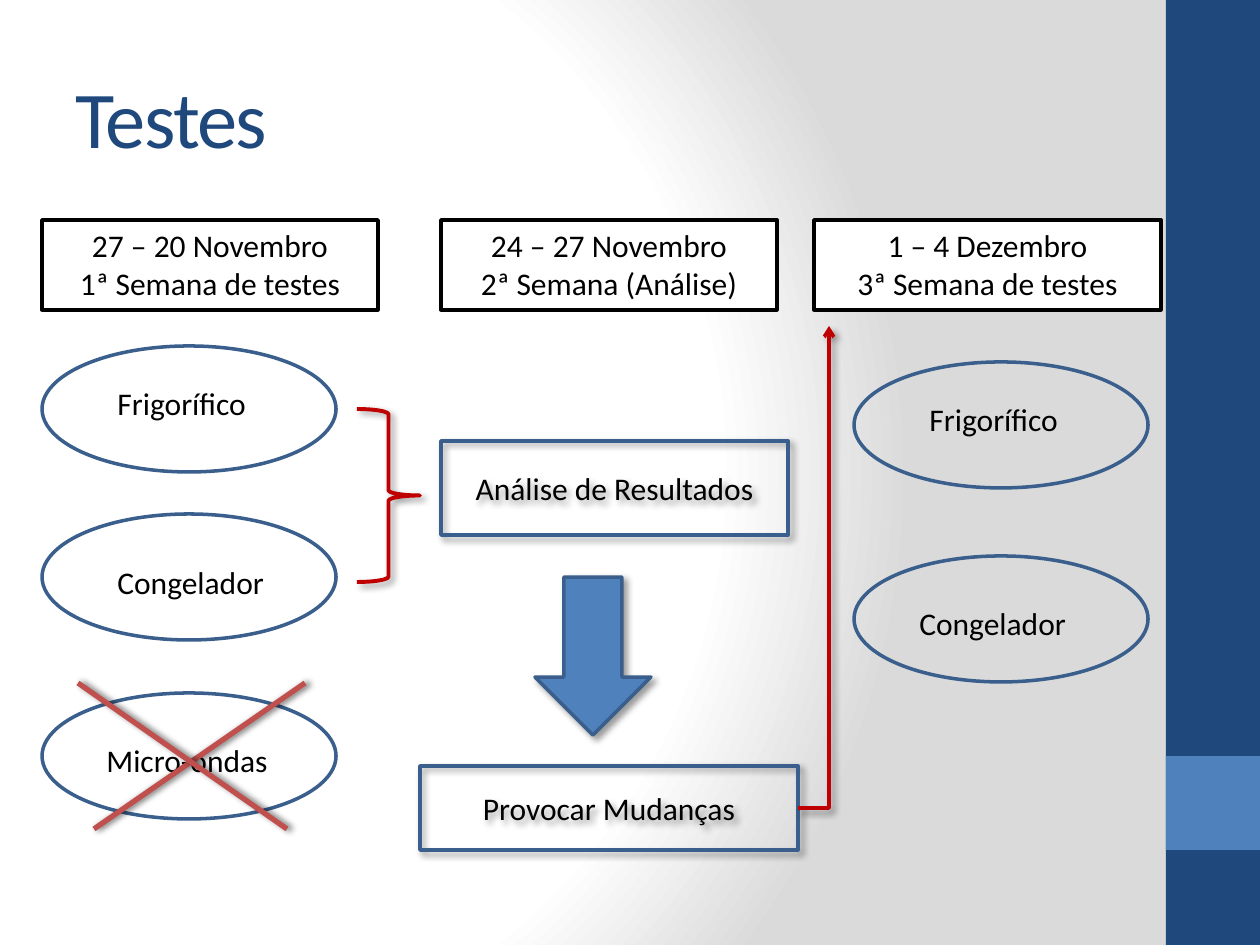
from dataclasses import dataclass

from lxml import etree
from pptx import Presentation
from pptx.dml.color import RGBColor
from pptx.enum.shapes import MSO_CONNECTOR, MSO_SHAPE
from pptx.enum.text import MSO_ANCHOR, MSO_AUTO_SIZE, PP_ALIGN
from pptx.oxml import parse_xml
from pptx.oxml.ns import nsdecls, qn
from pptx.util import Emu, Pt

RECTANGLE, ELLIPSE = MSO_SHAPE.RECTANGLE, MSO_SHAPE.OVAL
DOWN_ARROW, RIGHT_BRACE = MSO_SHAPE.DOWN_ARROW, MSO_SHAPE.RIGHT_BRACE
STRAIGHT, ELBOW = MSO_CONNECTOR.STRAIGHT, MSO_CONNECTOR.ELBOW
MIDDLE, TOP = MSO_ANCHOR.MIDDLE, MSO_ANCHOR.TOP
LEFT, CENTER = PP_ALIGN.LEFT, PP_ALIGN.CENTER
NO_FIT = MSO_AUTO_SIZE.NONE
PIXELS_PER_INCH = 126
TITLE_ONLY_LAYOUT = 5


@dataclass(frozen=True)
class Theme:
    """Colours, type sizes, line widths and shadows of the slide."""

    font: str = "Calibri"
    title_size: int = 46
    body_size: int = 18
    navy: str = "1F497D"
    blue: str = "4F81BD"
    outline: str = "3A5F8C"
    red: str = "C00000"
    cross: str = "C0504D"
    black: str = "000000"
    white: str = "FFFFFF"
    grey: str = "DADADA"
    line: float = 2
    brace_line: float = 2.25
    cross_line: float = 3
    soft_shadow: tuple = (40, 4, 3, 45)
    cross_shadow: tuple = (60, 4, 2, 0)


THEME = Theme()


def px(*lengths):
    """Convert pixel lengths to EMU."""
    return [Emu(round(length * 914400 / PIXELS_PER_INCH)) for length in lengths]


def set_background(slide):
    """Fill the background with a circular gradient."""
    slide.background.fill.gradient()
    old_fill = slide.element.find(".//" + qn("a:gradFill"))
    stops = ((0, THEME.white), (75, THEME.white), (100, THEME.grey))
    stop_xml = "".join(
        f'<a:gs pos="{position * 1000}"><a:srgbClr val="{color}"/></a:gs>'
        for position, color in stops
    )
    gradient = parse_xml(
        f'<a:gradFill {nsdecls("a")} rotWithShape="1"><a:gsLst>{stop_xml}</a:gsLst>'
        '<a:path path="circle"><a:fillToRect l="20000" t="50000" r="100000" b="50000"/>'
        "</a:path></a:gradFill>"
    )
    old_fill.getparent().replace(old_fill, gradient)


def set_shadow(shape, shadow):
    """Replace the inherited shadow with the given one, or with none."""
    properties = shape.element.spPr
    effects = etree.SubElement(properties, qn("a:effectLst"))
    if shadow:
        opacity, blur, distance, angle = shadow
        effects.append(parse_xml(
            f'<a:outerShdw {nsdecls("a")} blurRad="{Pt(blur)}" dist="{Pt(distance)}" '
            f'dir="{angle * 60000}" rotWithShape="0"><a:srgbClr val="{THEME.black}">'
            f'<a:alpha val="{opacity * 1000}"/></a:srgbClr></a:outerShdw>'
        ))


def set_line(line, color, width):
    """Give a line its colour and width."""
    line.color.rgb = RGBColor.from_string(color)
    line.width = Pt(width)


def write_text(shape, lines, align=CENTER, anchor=MIDDLE, wrap=True):
    """Write body paragraphs into a shape."""
    frame = shape.text_frame
    frame.word_wrap = wrap
    frame.vertical_anchor = anchor
    frame.text = "\n".join(lines)
    for paragraph in frame.paragraphs:
        paragraph.alignment = align
        paragraph.font.name = THEME.font
        paragraph.font.size = Pt(THEME.body_size)
        paragraph.font.color.rgb = RGBColor.from_string(THEME.black)


def add_shape(shapes, kind, box, fill=None, line=None, width=THEME.line, shadow=None):
    """Add a preset shape with explicit fill, line and shadow."""
    shape = shapes.add_shape(kind, *px(*box))
    if fill:
        shape.fill.solid()
        shape.fill.fore_color.rgb = RGBColor.from_string(fill)
    else:
        shape.fill.background()
    if line:
        set_line(shape.line, line, width)
    else:
        shape.line.fill.background()
    set_shadow(shape, shadow)
    return shape


def add_connector(shapes, kind, points, color, width, shadow):
    """Add a connector between two points."""
    connector = shapes.add_connector(kind, *px(*points))
    set_line(connector.line, color, width)
    set_shadow(connector, shadow)
    return connector


def add_title(slide, text):
    """Place and format the title placeholder."""
    title = slide.shapes.title
    title.left, title.top, title.width, title.height = px(63, 38, 1050, 157)
    frame = title.text_frame
    frame.text = text
    frame.auto_size = NO_FIT
    frame.vertical_anchor = MIDDLE
    paragraph = frame.paragraphs[0]
    paragraph.alignment = LEFT
    paragraph.font.name = THEME.font
    paragraph.font.size = Pt(THEME.title_size)
    paragraph.font.color.rgb = RGBColor.from_string(THEME.navy)
    paragraph.runs[0].font._element.set("spc", "-100")


def add_week(slide, left, width, lines):
    """Add the heading box of one week."""
    shape = add_shape(slide.shapes, RECTANGLE, (left, 220, width, 90), THEME.white, THEME.black)
    write_text(shape, lines, anchor=TOP)


def add_step(slide, box, text):
    """Add an outlined step with a shadow."""
    shape = add_shape(slide.shapes, RECTANGLE, box, line=THEME.outline, shadow=THEME.soft_shadow)
    write_text(shape, [text])


def add_appliance(slide, left, top, text, offset, width):
    """Add a grouped ellipse and label, and return the group."""
    group = slide.shapes.add_group_shape()
    add_shape(group.shapes, ELLIPSE, (left, top, 294, 126), line=THEME.outline)
    label = group.shapes.add_textbox(*px(left + offset[0], top + offset[1], width, 50))
    write_text(label, [text], LEFT, TOP, wrap=False)
    return group


def add_bent_arrow(slide, points):
    """Add an arrow that runs sideways and then upwards."""
    arrow = add_connector(slide.shapes, ELBOW, points, THEME.red, THEME.line, THEME.soft_shadow)
    arrow.element.spPr.find(qn("a:prstGeom")).set("prst", "bentConnector2")
    line = arrow.element.spPr.find(qn("a:ln"))
    etree.SubElement(line, qn("a:tailEnd")).set("type", "arrow")


def main():
    """Build and save the slide."""
    presentation = Presentation()
    presentation.slide_width, presentation.slide_height = px(1260, 945)
    slide = presentation.slides.add_slide(presentation.slide_layouts[TITLE_ONLY_LAYOUT])
    shapes = slide.shapes
    set_background(slide)
    add_shape(shapes, RECTANGLE, (1166, 0, 94, 945), THEME.navy)
    add_shape(shapes, RECTANGLE, (1166, 756, 94, 94), THEME.blue)
    add_title(slide, "Testes")

    for week in (
        (42, 336, ("27 – 20 Novembro", "1ª Semana de testes")),
        (441, 336, ("24 – 27 Novembro", "2ª Semana (Análise)")),
        (814, 347, ("1 – 4 Dezembro", "3ª Semana de testes")),
    ):
        add_week(slide, *week)

    for appliance in (
        (42, 346, "Frigorífico", (63, 32), 155),
        (42, 514, "Congelador", (63, 43), 174),
        (854, 362, "Frigorífico", (63, 32), 155),
        (854, 556, "Congelador", (53, 42), 174),
    ):
        add_appliance(slide, *appliance)
    rejected = add_appliance(slide, 42, 693, "Micro-ondas", (52, 42), 189)
    cross_style = (THEME.cross, THEME.cross_line, THEME.cross_shadow)
    add_connector(rejected.shapes, STRAIGHT, (305, 683, 94, 829), *cross_style)
    add_connector(shapes, STRAIGHT, (287, 829, 78, 683), *cross_style)

    add_step(slide, (441, 441, 347, 94), "Análise de Resultados")
    add_shape(shapes, DOWN_ARROW, (535, 577, 116, 158), THEME.blue, THEME.outline,
              shadow=THEME.soft_shadow)
    add_step(slide, (420, 766, 378, 84), "Provocar Mudanças")
    add_bent_arrow(slide, (798, 808, 829, 326))
    add_shape(shapes, RIGHT_BRACE, (357, 409, 63, 173), line=THEME.red,
              width=THEME.brace_line, shadow=THEME.soft_shadow)
    presentation.save("out.pptx")


if __name__ == "__main__":
    main()
